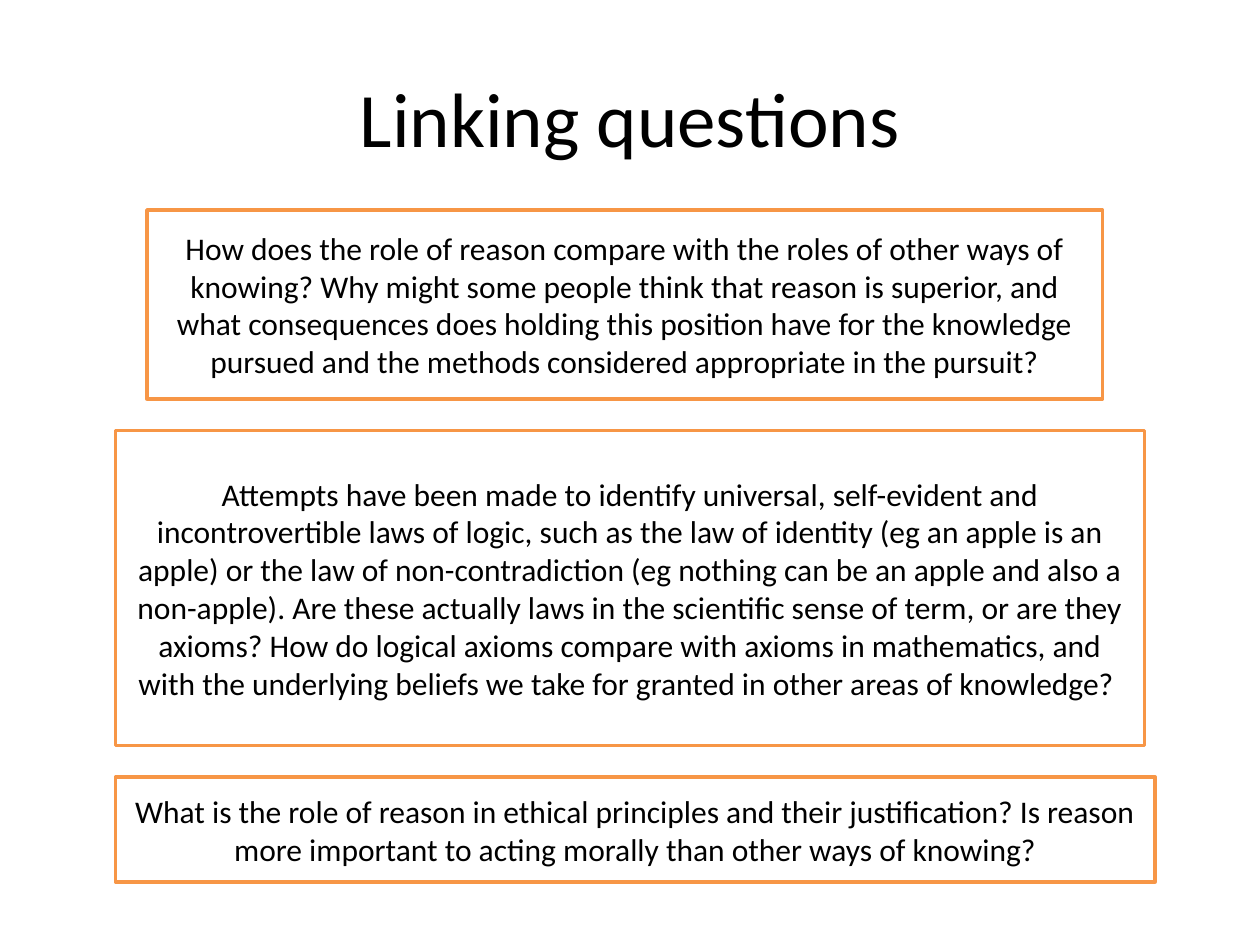
from dataclasses import dataclass

from pptx import Presentation
from pptx.dml.color import RGBColor
from pptx.enum import shapes, text
from pptx.util import Pt


@dataclass(frozen=True)
class Theme:
    font: str = "Calibri"
    ink: RGBColor = RGBColor(0, 0, 0)
    paper: RGBColor = RGBColor(255, 255, 255)
    accent: RGBColor = RGBColor(0xF7, 0x96, 0x46)
    title_size: int = 44
    body_size: int = 18
    border: int = 2


THEME = Theme()
TITLE_BOX = (36, 21.6, 648, 90)
FIRST_TOP, GAP = 120, 18

# left, width, height, wording
QUESTIONS = [
    (84, 546, 108,
     "How does the role of reason compare with the roles of other ways of "
     "knowing? Why might some people think that reason is superior, and what "
     "consequences does holding this position have for the knowledge pursued "
     "and the methods considered appropriate in the pursuit?"),
    (66, 588, 180,
     "Attempts have been made to identify universal, self-evident and "
     "incontrovertible laws of logic, such as the law of identity (eg an apple "
     "is an apple) or the law of non-contradiction (eg nothing can be an apple "
     "and also a non-apple). Are these actually laws in the scientific sense "
     "of term, or are they axioms? How do logical axioms compare with axioms "
     "in mathematics, and with the underlying beliefs we take for granted in "
     "other areas of knowledge? "),
    (66, 594, 60,
     "What is the role of reason in ethical principles and their "
     "justification? Is reason more important to acting morally than other "
     "ways of knowing?"),
]


def write_centred(sp, words, size):
    tf = sp.text_frame
    tf.word_wrap = True
    tf.vertical_anchor = text.MSO_ANCHOR.MIDDLE
    p = tf.paragraphs[0]
    p.alignment = text.PP_ALIGN.CENTER
    r = p.add_run()
    r.text = words
    r.font.name = THEME.font
    r.font.size = Pt(size)
    r.font.color.rgb = THEME.ink


def place_title(s, box, words):
    sp = s.shapes.title
    sp.left, sp.top, sp.width, sp.height = map(Pt, box)
    write_centred(sp, words, THEME.title_size)


def add_question(s, box, words):
    sp = s.shapes.add_shape(shapes.MSO_SHAPE.RECTANGLE, *map(Pt, box))
    sp.shadow.inherit = False
    sp.fill.solid()
    sp.fill.fore_color.rgb = THEME.paper
    sp.line.color.rgb = THEME.accent
    sp.line.width = Pt(THEME.border)
    write_centred(sp, words, THEME.body_size)


def main():
    prs = Presentation()
    prs.slide_width, prs.slide_height = Pt(720), Pt(540)
    s = prs.slides.add_slide(prs.slide_layouts[5])
    place_title(s, TITLE_BOX, "Linking questions")
    top = FIRST_TOP
    for left, width, height, words in QUESTIONS:
        add_question(s, (left, top, width, height), words)
        top += height + GAP
    prs.save("out.pptx")


if __name__ == "__main__":
    main()
